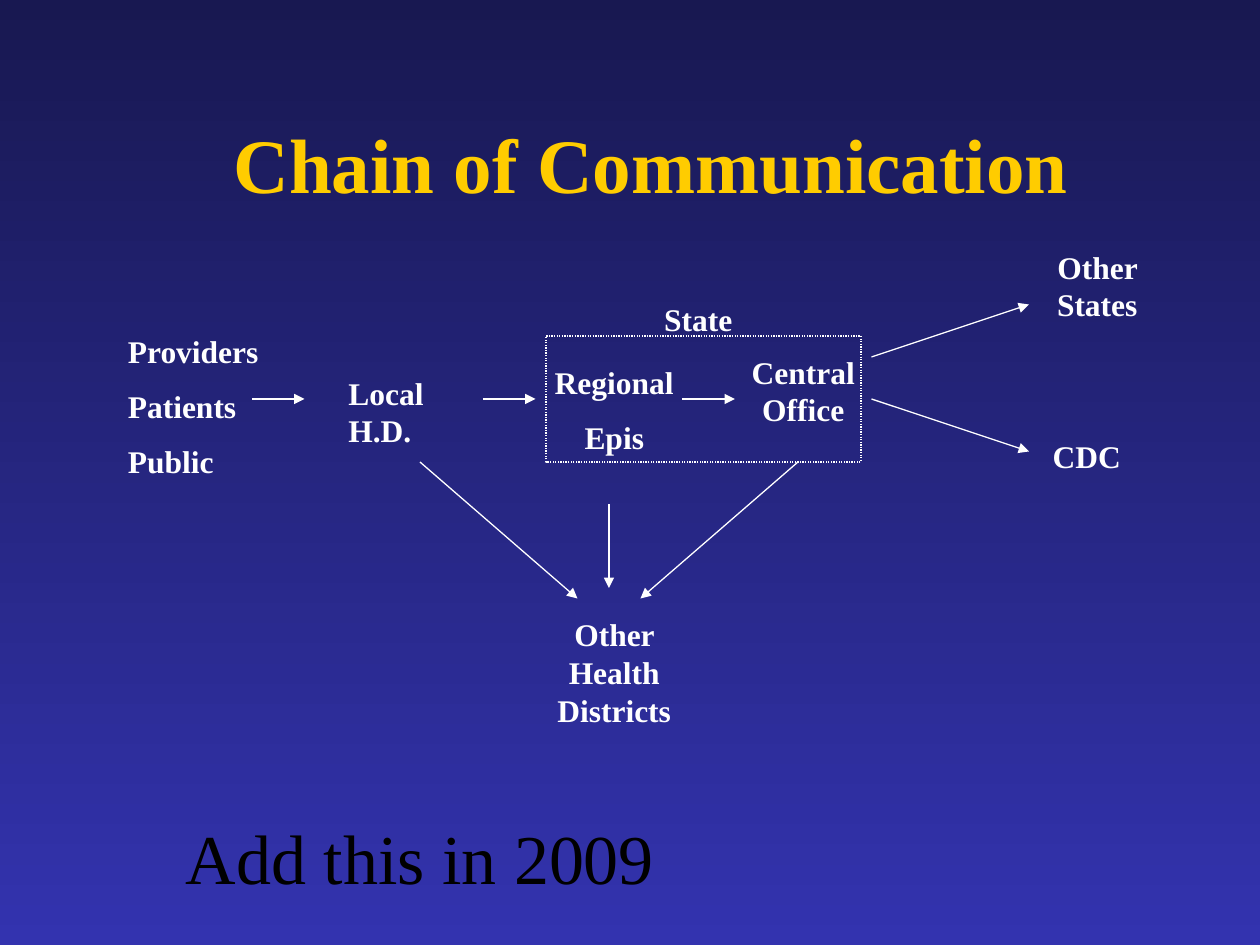
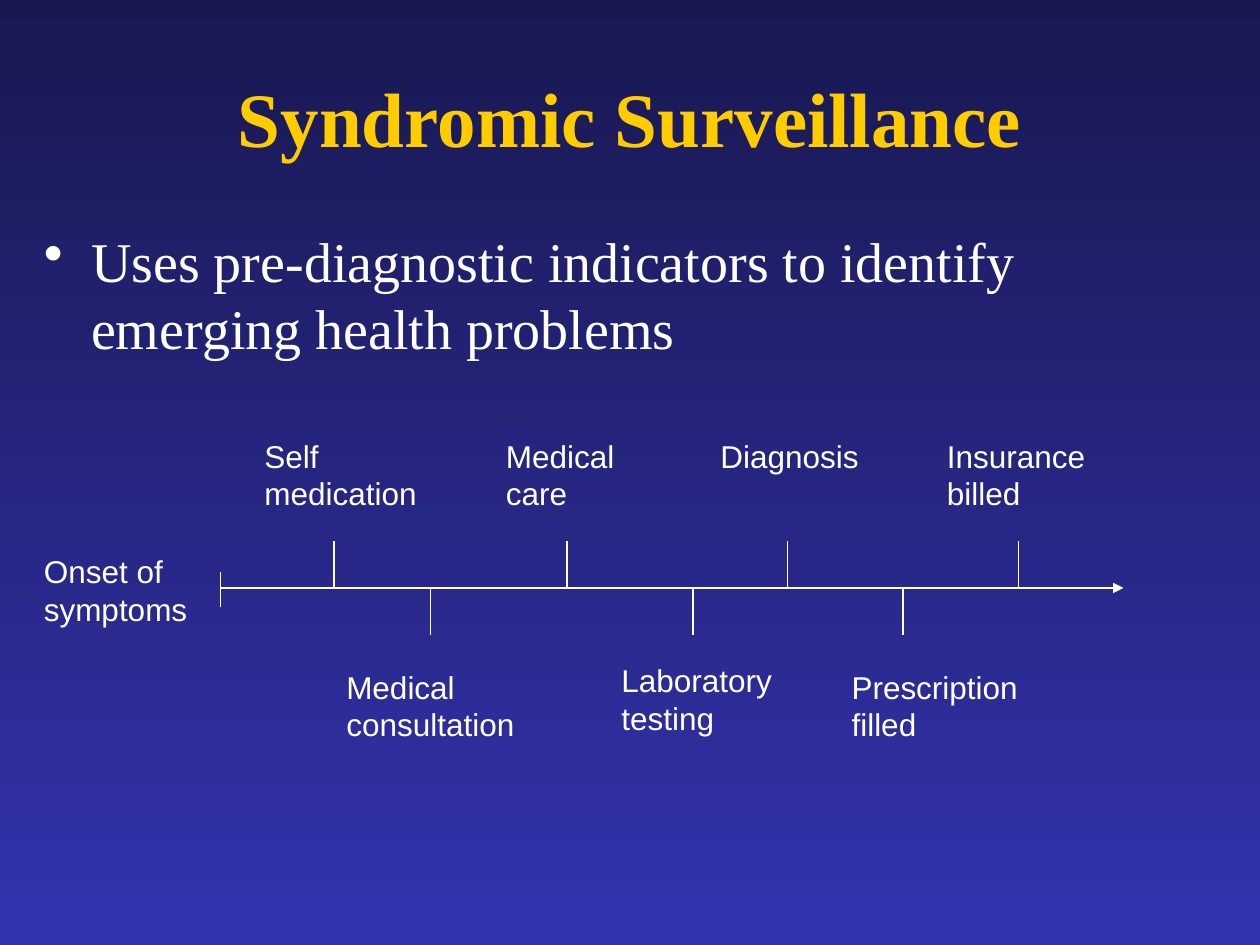
"""Builds two slides on disease reporting: a communication chain and a symptom timeline."""
from lxml.etree import SubElement
from pptx import Presentation
from pptx.dml.color import RGBColor
from pptx.enum.dml import MSO_LINE
from pptx.enum.shapes import MSO_CONNECTOR, MSO_SHAPE
from pptx.enum.text import MSO_ANCHOR, PP_ALIGN
from pptx.oxml.ns import qn
from pptx.util import Pt

COLORS = {"top": "181851", "bottom": "3333AF", "title": "FFCC00", "text": "FFFFFF", "note": "000000"}
SERIF, SANS = "Times New Roman", "Arial"
LEFT, CENTER = PP_ALIGN.LEFT, PP_ALIGN.CENTER

CHAIN_TITLE = "Chain of Communication"
NODE_WIDTH = 90
CHAIN_NODES = [
    (["Providers", "Patients", "Public"], 66, 186, 94, LEFT),
    (["Local H.D."], 192, 210, 50, LEFT),
    (["Regional", "Epis"], 306, 204, 61, CENTER),
    (["Central Office"], 414, 198, 50, CENTER),
    (["CDC"], 576, 246, 29, CENTER),
    (["Other States"], 582, 138, 50, CENTER),
    (["Other Health Districts"], 306, 348, 72, CENTER),
    (["State"], 354, 168, 29, CENTER),
]
CHAIN_ARROWS = [
    ((144, 228), (174, 228)),
    ((276, 228), (306, 228)),
    ((390, 228), (420, 228)),
    ((348, 288), (348, 336)),
    ((240, 264), (330, 342)),
    ((456, 264), (366, 342)),
    ((498, 228), (588, 258)),
    ((498, 204), (588, 174)),
]
STATE_BOX = (312, 192, 180, 72)
CHAIN_NOTE = "Add this in 2009"

TIMELINE_TITLE = "Syndromic Surveillance"
TIMELINE_BULLET = "Uses pre-diagnostic indicators to identify emerging health problems"
ONSET = "Onset of symptoms"
AXIS_START, AXIS_END, AXIS_Y, TICK = 126, 642, 336, 27
EVENTS_ABOVE = [
    (["Self medication"], 144, 246, 102, 190.8),
    (["Medical care"], 282, 246, 84, 324),
    (["Diagnosis"], 404.6, 246, 100, 450),
    (["Insurance billed"], 534, 246, 96, 582),
]
EVENTS_BELOW = [
    (["Medical consultation"], 190.8, 378, 120, 246),
    (["Laboratory testing"], 348, 374.4, 102, 396),
    (["Prescription", "filled"], 479.5, 378, 115, 516),
]


def rgb(name):
    return RGBColor.from_string(COLORS[name])


def add_slide(presentation, title, title_box):
    slide = presentation.slides.add_slide(presentation.slide_layouts[6])
    fill = slide.background.fill
    fill.gradient()
    fill.gradient_angle = 270
    for stop, name in zip(fill.gradient_stops, ("top", "bottom")):
        stop.color.rgb = rgb(name)
    frame = add_text(slide, [title], title_box, 44, bold=True, color="title", align=CENTER)
    frame.vertical_anchor = MSO_ANCHOR.MIDDLE
    return slide


def add_text(slide, lines, box, size=18, font=SERIF, bold=False, color="text", align=LEFT, gap=0):
    frame = slide.shapes.add_textbox(*map(Pt, box)).text_frame
    frame.word_wrap = True
    frame.text = "\n".join(lines)
    for index, paragraph in enumerate(frame.paragraphs):
        paragraph.alignment = align
        paragraph.space_before = Pt(gap if index else 0)
        paragraph.font.name = font
        paragraph.font.size = Pt(size)
        paragraph.font.bold = bold
        paragraph.font.color.rgb = rgb(color)
    return frame


def add_line(slide, start, end, arrow=False):
    connector = slide.shapes.add_connector(MSO_CONNECTOR.STRAIGHT, *map(Pt, (*start, *end)))
    connector.line.color.rgb = rgb("text")
    connector.line.width = Pt(0.75)
    if arrow:
        SubElement(connector.line._get_or_add_ln(), qn("a:tailEnd"), type="triangle")
    SubElement(connector._element.spPr, qn("a:effectLst"))


def add_bullet(paragraph, indent):
    properties = paragraph._p.get_or_add_pPr()
    properties.set("marL", str(Pt(indent)))
    properties.set("indent", str(-Pt(indent)))
    bullet = SubElement(properties, qn("a:buChar"), char="•")
    defaults = properties.find(qn("a:defRPr"))
    if defaults is not None:
        defaults.addprevious(bullet)


def build_chain(presentation):
    slide = add_slide(presentation, CHAIN_TITLE, (66, 48, 612, 90))
    for lines, left, top, height, align in CHAIN_NODES:
        add_text(slide, lines, (left, top, NODE_WIDTH, height), bold=True, align=align, gap=10)
    for start, end in CHAIN_ARROWS:
        add_line(slide, start, end, arrow=True)
    state = slide.shapes.add_shape(MSO_SHAPE.RECTANGLE, *map(Pt, STATE_BOX))
    state.shadow.inherit = False
    state.fill.background()
    state.line.color.rgb = rgb("text")
    state.line.width = Pt(0.75)
    state.line.dash_style = MSO_LINE.ROUND_DOT
    add_text(slide, [CHAIN_NOTE], (24, 462, 432, 55.5), 40, color="note", align=CENTER)


def build_timeline(presentation):
    slide = add_slide(presentation, TIMELINE_TITLE, (36, 21.6, 648, 90))
    body = add_text(slide, [TIMELINE_BULLET], (18, 126, 684, 390), 32)
    add_bullet(body.paragraphs[0], 27)
    add_text(slide, [ONSET], (18, 312, 108, 50), font=SANS)
    add_line(slide, (AXIS_START, AXIS_Y), (AXIS_END, AXIS_Y), arrow=True)
    add_line(slide, (AXIS_START, 347), (AXIS_START, 327))
    for events, tick in ((EVENTS_ABOVE, -TICK), (EVENTS_BELOW, TICK)):
        for lines, left, top, width, x in events:
            add_text(slide, lines, (left, top, width, 50), font=SANS)
            add_line(slide, (x, AXIS_Y), (x, AXIS_Y + tick))


def main():
    presentation = Presentation()
    presentation.slide_width, presentation.slide_height = Pt(720), Pt(540)
    build_chain(presentation)
    build_timeline(presentation)
    presentation.save("out.pptx")


if __name__ == "__main__":
    main()
